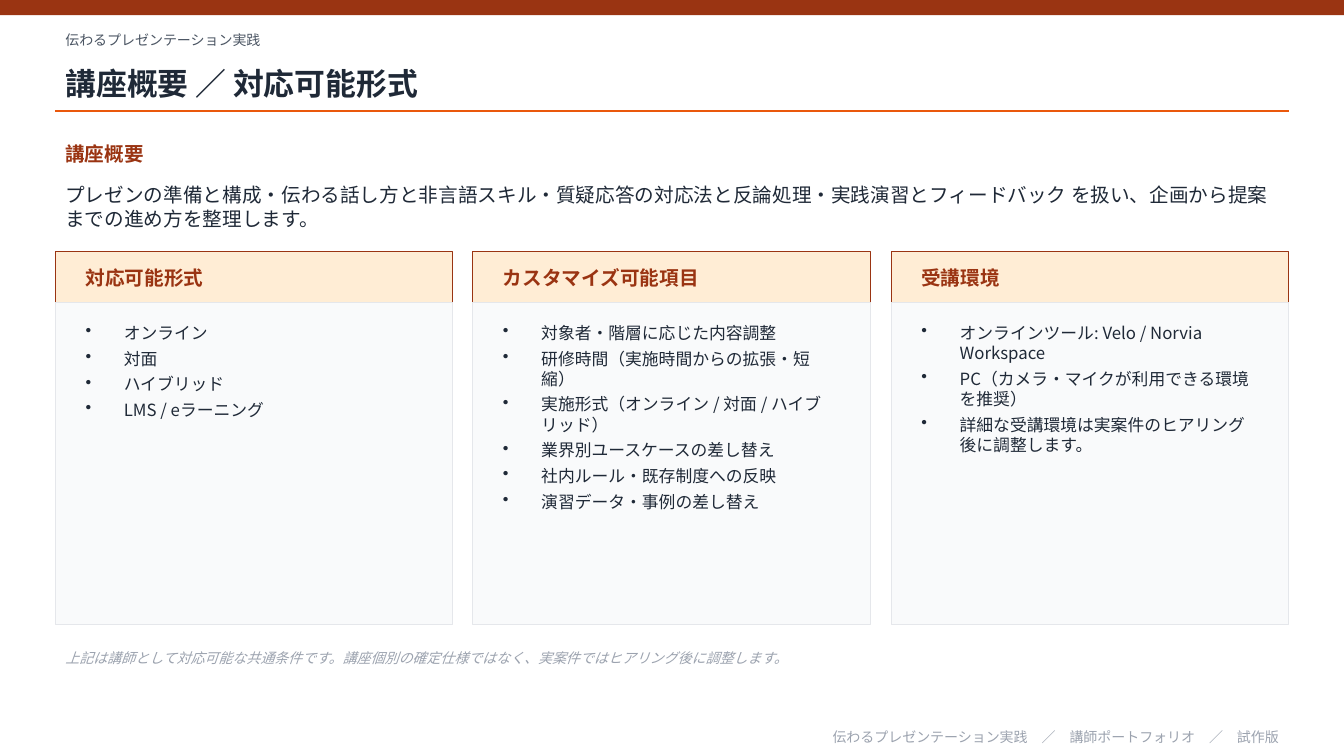
"""Build the course overview slide with its three condition cards."""
import dataclasses

import lxml.etree
import pptx
import pptx.dml.color
import pptx.enum.shapes
import pptx.enum.text
import pptx.oxml.ns
import pptx.util

PX = 9144
LEFT, WIDTH = 55, 1223
CARD_WIDTH, CARD_TOP, HEAD_HEIGHT, BODY_HEIGHT = 394, 250, 50, 320
CARD_PADDING = 20
INDENT = 38

ALIGN = pptx.enum.text.PP_ALIGN
ANCHOR = pptx.enum.text.MSO_ANCHOR

COURSE = "伝わるプレゼンテーション実践"
SUMMARY = (
    "プレゼンの準備と構成・伝わる話し方と非言語スキル・質疑応答の対応法と反論処理・"
    "実践演習とフィードバック を扱い、企画から提案までの進め方を整理します。"
)
NOTICE = (
    "上記は講師として対応可能な共通条件です。"
    "講座個別の確定仕様ではなく、実案件ではヒアリング後に調整します。"
)
CARDS = [
    ("対応可能形式", ["オンライン", "対面", "ハイブリッド", "LMS / eラーニング"]),
    ("カスタマイズ可能項目", [
        "対象者・階層に応じた内容調整",
        "研修時間（実施時間からの拡張・短縮）",
        "実施形式（オンライン / 対面 / ハイブリッド）",
        "業界別ユースケースの差し替え",
        "社内ルール・既存制度への反映",
        "演習データ・事例の差し替え",
    ]),
    ("受講環境", [
        "オンラインツール: Velo / Norvia Workspace",
        "PC（カメラ・マイクが利用できる環境を推奨）",
        "詳細な受講環境は実案件のヒアリング後に調整します。",
    ]),
]


@dataclasses.dataclass(frozen=True)
class Theme:
    """Hold the colours, font and type sizes of the slide."""
    font: str = "Noto Sans CJK JP"
    brand: str = "9A3412"
    accent: str = "EA580C"
    tint: str = "FFEDD5"
    panel: str = "F9FAFB"
    border: str = "E5E7EB"
    ink: str = "1F2937"
    muted: str = "4B5563"
    faint: str = "9CA3AF"
    title: int = 22
    heading: int = 14
    item: int = 12
    small: int = 10


THEME = Theme()


def px(*lengths):
    """Turn whole px lengths into EMU."""
    return [pptx.util.Emu(n * PX) for n in lengths]


def rgb(color):
    """Return the colour object for a hex string."""
    return pptx.dml.color.RGBColor.from_string(color)


def add_child(parent, tag, **attributes):
    """Append a DrawingML element to a parent."""
    name = pptx.oxml.ns.qn(tag)
    return lxml.etree.SubElement(parent, name, **attributes)


def write_paragraph(p, text, *, size, color, bold=False, italic=False,
                    align=ALIGN.LEFT, bullet=False, after=0):
    """Write formatted text into a paragraph."""
    p.alignment = align
    p.space_after = pptx.util.Pt(after)
    if bullet:
        pPr = p._p.get_or_add_pPr()
        pPr.set("marL", str(INDENT * PX))
        pPr.set("indent", str(-INDENT * PX))
        add_child(pPr, "a:buChar", char="•")
    r = p.add_run()
    r.text = text
    r.font.size = pptx.util.Pt(size)
    r.font.bold = bold
    r.font.italic = italic
    r.font.color.rgb = rgb(color)
    r.font.name = THEME.font
    add_child(r._r.get_or_add_rPr(), "a:ea", typeface=THEME.font)


def fill_frame(tf, texts, *, anchor=ANCHOR.MIDDLE, **style):
    """Fill a text frame with one paragraph per text."""
    tf.word_wrap = True
    tf.auto_size = pptx.enum.text.MSO_AUTO_SIZE.NONE
    tf.vertical_anchor = anchor
    for i, text in enumerate(texts):
        p = tf.add_paragraph() if i else tf.paragraphs[0]
        write_paragraph(p, text, **style)


def add_text(s, box, *texts, **style):
    """Add a text box."""
    sp = s.shapes.add_textbox(*px(*box))
    fill_frame(sp.text_frame, texts, **style)


def set_title(s, box, text, **style):
    """Move and format the title placeholder."""
    sp = s.shapes.title
    sp.left, sp.top, sp.width, sp.height = px(*box)
    fill_frame(sp.text_frame, [text], **style)


def add_rect(s, box, fill, line=None):
    """Add a flat rectangle with an optional outline."""
    kind = pptx.enum.shapes.MSO_SHAPE.RECTANGLE
    sp = s.shapes.add_shape(kind, *px(*box))
    sp.shadow.inherit = False
    sp.fill.solid()
    sp.fill.fore_color.rgb = rgb(fill)
    if line:
        sp.line.color.rgb = rgb(line)
        sp.line.width = pptx.util.Pt(0.75)
    else:
        sp.line.fill.background()


def add_rule(s, y):
    """Add the horizontal rule under the title."""
    kind = pptx.enum.shapes.MSO_CONNECTOR.STRAIGHT
    line = s.shapes.add_connector(kind, *px(LEFT, y, LEFT + WIDTH, y))
    line.line.color.rgb = rgb(THEME.accent)
    line.line.width = pptx.util.Pt(1)
    add_child(line._element.spPr, "a:effectLst")


def add_card(s, x, heading, items):
    """Add a card with a heading band and a bulleted panel."""
    body_top = CARD_TOP + HEAD_HEIGHT
    text_x, text_width = x + CARD_PADDING, CARD_WIDTH - 2 * CARD_PADDING
    add_rect(s, (x, CARD_TOP, CARD_WIDTH, HEAD_HEIGHT), THEME.tint, THEME.brand)
    add_text(s, (text_x, CARD_TOP, text_width, HEAD_HEIGHT), heading,
             size=THEME.heading, color=THEME.brand, bold=True)
    add_rect(s, (x, body_top, CARD_WIDTH, BODY_HEIGHT), THEME.panel, THEME.border)
    add_text(s, (text_x, body_top + 15, text_width, BODY_HEIGHT - 35), *items,
             size=THEME.item, color=THEME.ink, anchor=ANCHOR.TOP,
             bullet=True, after=4)


def main():
    """Build and save the slide."""
    prs = pptx.Presentation()
    prs.slide_width, prs.slide_height = px(1333, 750)
    s = prs.slides.add_slide(prs.slide_layouts[5])
    add_rect(s, (0, 0, 1333, 15), THEME.brand)
    add_text(s, (LEFT, 25, WIDTH, 30), COURSE, size=THEME.small, color=THEME.muted)
    set_title(s, (LEFT, 55, WIDTH, 55), "講座概要 ／ 対応可能形式",
              size=THEME.title, color=THEME.ink, bold=True)
    add_rule(s, 110)
    add_text(s, (LEFT, 135, WIDTH, 35), "講座概要",
             size=THEME.heading, color=THEME.brand, bold=True)
    add_text(s, (LEFT, 175, WIDTH, 60), SUMMARY,
             size=THEME.heading, color=THEME.ink)
    for i, (heading, items) in enumerate(CARDS):
        x = LEFT + i * (WIDTH - CARD_WIDTH) // (len(CARDS) - 1)
        add_card(s, x, heading, items)
    add_text(s, (LEFT, 635, WIDTH, 35), NOTICE,
             size=THEME.small, color=THEME.faint, italic=True)
    add_text(s, (LEFT, 720, WIDTH, 22), f"{COURSE}　／　講師ポートフォリオ　／　試作版",
             size=THEME.small, color=THEME.faint, align=ALIGN.RIGHT)
    prs.save("out.pptx")


if __name__ == "__main__":
    main()
